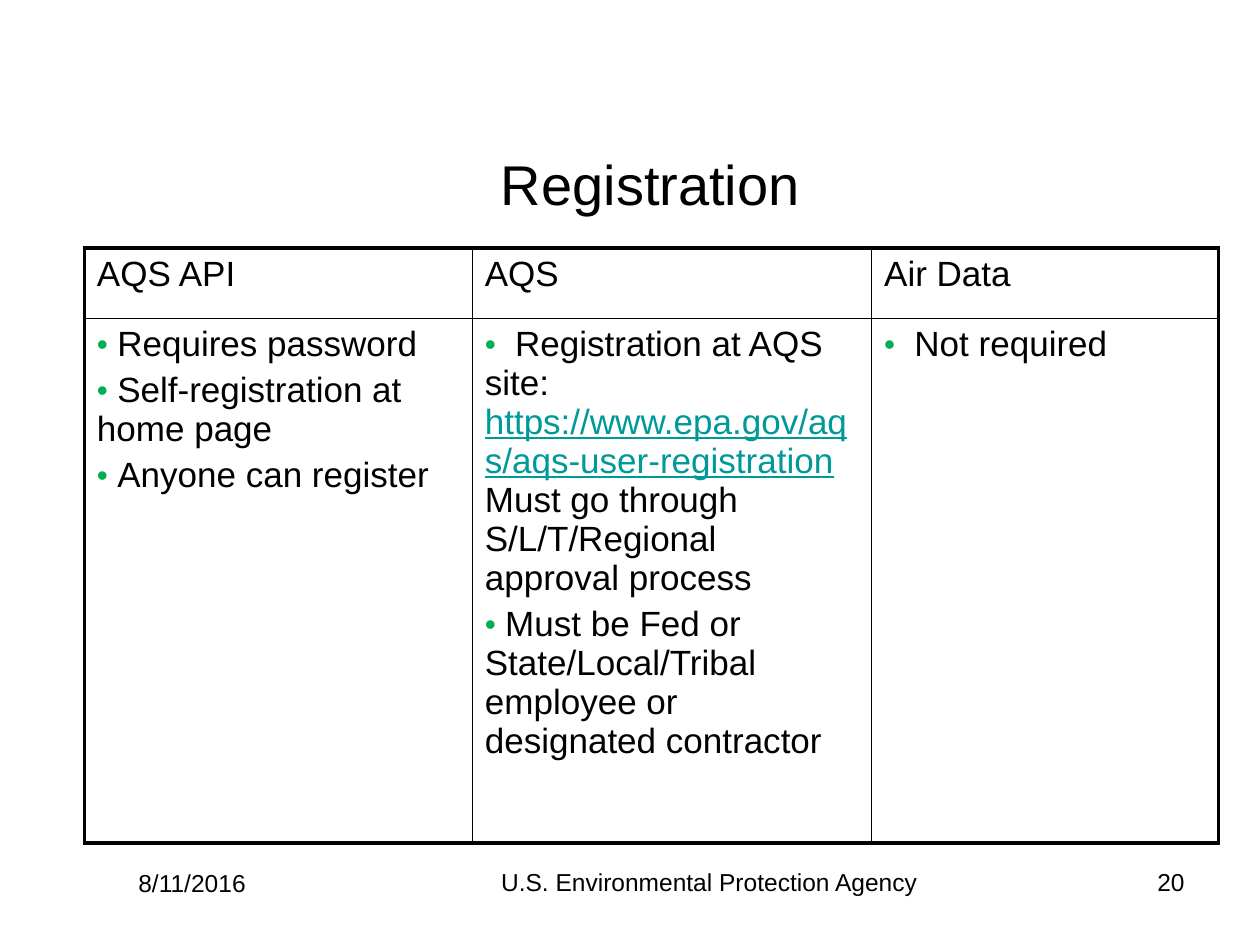
"""Build the Registration slide with its table and footer."""
from lxml import etree
from pptx import Presentation
from pptx.dml.color import RGBColor
from pptx.enum.text import MSO_ANCHOR, PP_ALIGN
from pptx.oxml import parse_xml
from pptx.oxml.ns import nsdecls, qn
from pptx.util import Cm, Pt

LEFT, MID, RIGHT = PP_ALIGN.LEFT, PP_ALIGN.CENTER, PP_ALIGN.RIGHT
TOP, HALF = MSO_ANCHOR.TOP, MSO_ANCHOR.MIDDLE
BLACK, GREEN, TEAL = "000000", "00B050", "009999"
THICK, THIN = Pt(2.25), Pt(1)
NARROW, WIDE = Cm(0.41), Cm(0.61)


def paint(color, hue):
    color.rgb = RGBColor.from_string(hue)


def write(para, text, size=20, hue=BLACK, line=False, align=LEFT):
    para.alignment = align
    run = para.add_run()
    run.text = text
    run.font.name = "Arial"
    run.font.size = Pt(size)
    run.font.underline = line
    paint(run.font.color, hue)


prs = Presentation()
prs.slide_width, prs.slide_height = Cm(25.4), Cm(19.05)
slide = prs.slides.add_slide(prs.slide_layouts[6])

labels = [
    ("Registration", 4.01, 2.74, 18.21, 1.91, 32, MID, HALF),
    ("8/11/2016", 2.54, 17.37, 5.51, 1.27, 14, LEFT, TOP),
    ("U.S. Environmental Protection Agency", 9.32, 17.35, 9.96, 1.27, 14, MID, TOP),
    ("20", 18.85, 17.35, 5.28, 1.27, 14, RIGHT, TOP),
]
for text, x, y, wide, high, size, align, anchor in labels:
    frame = slide.shapes.add_textbox(Cm(x), Cm(y), Cm(wide), Cm(high)).text_frame
    frame.word_wrap = True
    frame.vertical_anchor = anchor
    write(frame.paragraphs[0], text, size=size, align=align)

heads = ["AQS API", "AQS", "Air Data"]
points = [
    [
        (NARROW, [("Requires password", BLACK)]),
        (NARROW, [("Self-registration at home page", BLACK)]),
        (NARROW, [("Anyone can register", BLACK)]),
    ],
    [
        (WIDE, [
            ("Registration at AQS site: ", BLACK),
            ("https://www.epa.gov/aqs/aqs-user-registration ", TEAL),
            ("Must go through S/L/T/Regional approval process", BLACK),
        ]),
        (NARROW, [("Must be Fed or State/Local/Tribal employee or designated contractor", BLACK)]),
    ],
    [(WIDE, [("Not required", BLACK)])],
]
widths, heights = [7.82, 8.05, 6.99], [1.42, 10.57]

table = slide.shapes.add_table(
    2, 3, Cm(1.7), Cm(5), Cm(sum(widths)), Cm(sum(heights))).table
table.first_row = table.horz_banding = False
for col, wide in zip(table.columns, widths):
    col.width = Cm(wide)
for row, high in zip(table.rows, heights):
    row.height = Cm(high)

for r in range(2):
    for c in range(3):
        cell = table.cell(r, c)
        edges = {"lnL": c == 0, "lnR": c == 2, "lnT": r == 0, "lnB": r == 1}
        props = cell._tc.get_or_add_tcPr()
        for tag, outer in edges.items():
            props.append(parse_xml(
                f'<a:{tag} {nsdecls("a")} w="{THICK if outer else THIN}"><a:solidFill>'
                f'<a:srgbClr val="{BLACK}"/></a:solidFill></a:{tag}>'))
        cell.fill.background()

for c, head in enumerate(heads):
    write(table.cell(0, c).text_frame.paragraphs[0], head)
    frame = table.cell(1, c).text_frame
    for n, (gap, parts) in enumerate(points[c]):
        para = frame.add_paragraph() if n else frame.paragraphs[0]
        props = para._p.get_or_add_pPr()
        props.set("marL", "0")
        props.set("indent", "0")
        tint = etree.SubElement(props, qn("a:buClr"))
        etree.SubElement(tint, qn("a:srgbClr"), val=GREEN)
        etree.SubElement(props, qn("a:buSzPct"), val="90000")
        etree.SubElement(props, qn("a:buFont"), typeface="Arial")
        etree.SubElement(props, qn("a:buChar"), char="•")
        tabs = etree.SubElement(props, qn("a:tabLst"))
        etree.SubElement(tabs, qn("a:tab"), pos=str(gap), algn="l")
        if n:
            para.space_before = Pt(4)
        for k, (text, hue) in enumerate(parts):
            write(para, text if k else "\t" + text, hue=hue, line=hue == TEAL)

prs.save("out.pptx")
